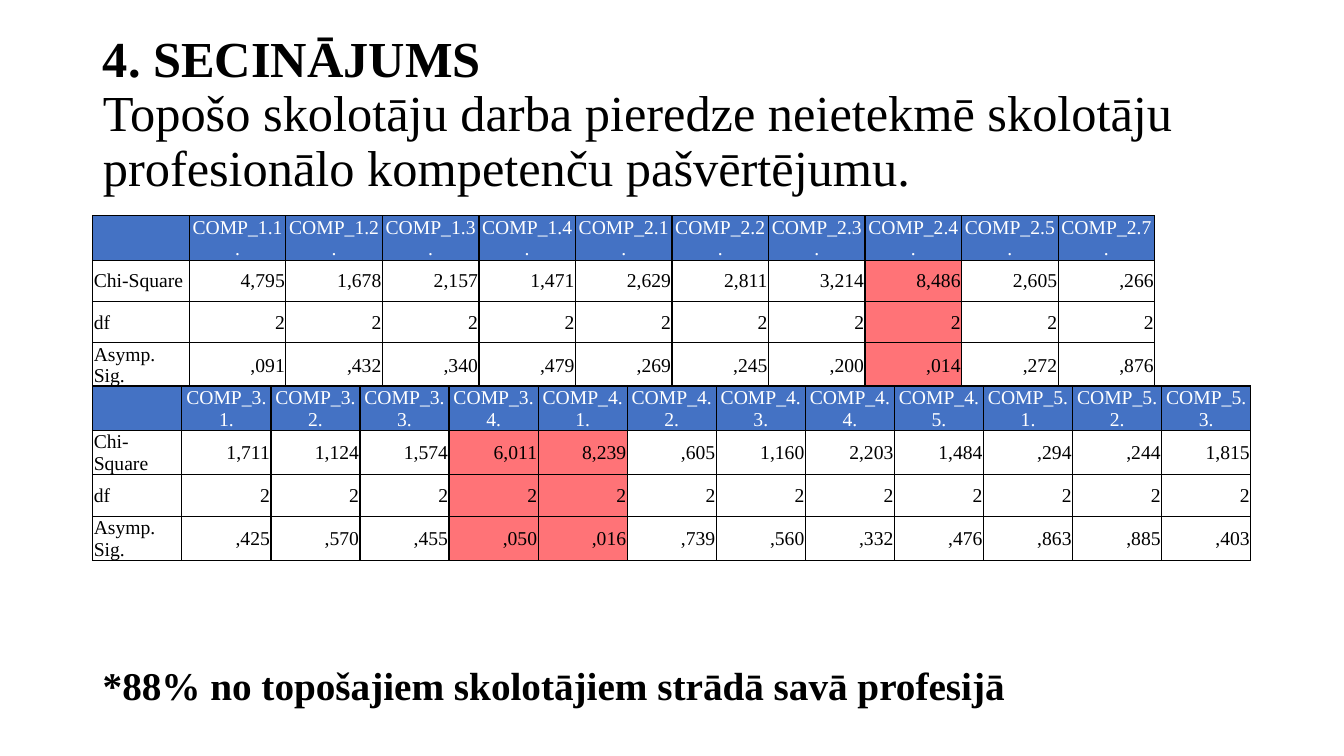
from lxml import etree
from pptx import Presentation
from pptx.dml.color import RGBColor
from pptx.enum.text import MSO_ANCHOR, MSO_AUTO_SIZE, PP_ALIGN
from pptx.oxml.ns import qn
from pptx.util import Inches, Pt

LEFT, CENTER, RIGHT = PP_ALIGN.LEFT, PP_ALIGN.CENTER, PP_ALIGN.RIGHT
MIDDLE = MSO_ANCHOR.MIDDLE
NO_FIT, GROW = MSO_AUTO_SIZE.NONE, MSO_AUTO_SIZE.SHAPE_TO_FIT_TEXT

WIDTH, HEIGHT = 13.33, 7.5
MARGIN = 0.92
CONTENT = WIDTH - 2 * MARGIN
ROW = 0.41
FONT = "Times New Roman"
BLACK, WHITE, BLUE, RED = "000000", "FFFFFF", "4472C4", "FF7377"
CELL_FORMAT = {
    "margin_left": Inches(0.01),
    "margin_right": Inches(0.01),
    "margin_top": Inches(0.01),
    "margin_bottom": 0,
    "vertical_anchor": MIDDLE,
}

FIRST_COMPETENCES = [
    ["", "COMP_1.1.", "COMP_1.2.", "COMP_1.3.", "COMP_1.4.", "COMP_2.1.",
     "COMP_2.2.", "COMP_2.3.", "COMP_2.4.", "COMP_2.5.", "COMP_2.7."],
    ["Chi-Square", "4,795", "1,678", "2,157", "1,471", "2,629",
     "2,811", "3,214", "8,486", "2,605", ",266"],
    ["df"] + ["2"] * 10,
    ["Asymp. Sig.", ",091", ",432", ",340", ",479", ",269",
     ",245", ",200", ",014", ",272", ",876"],
]
LAST_COMPETENCES = [
    ["", "COMP_3.1.", "COMP_3.2.", "COMP_3.3.", "COMP_3.4.", "COMP_4.1.", "COMP_4.2.",
     "COMP_4.3.", "COMP_4.4.", "COMP_4.5.", "COMP_5.1.", "COMP_5.2.", "COMP_5.3."],
    ["Chi-Square", "1,711", "1,124", "1,574", "6,011", "8,239", ",605",
     "1,160", "2,203", "1,484", ",294", ",244", "1,815"],
    ["df"] + ["2"] * 12,
    ["Asymp. Sig.", ",425", ",570", ",455", ",050", ",016", ",739",
     ",560", ",332", ",476", ",863", ",885", ",403"],
]


def color(value):
    """Turn a hex string into a colour."""
    return RGBColor.from_string(value)


def set_values(target, values):
    """Set every attribute of a dict on the target."""
    for name, value in values.items():
        setattr(target, name, value)


def add_text(paragraph, text, size, bold=False, ink=BLACK):
    """Add a formatted run to a paragraph."""
    run = paragraph.add_run()
    run.text = text
    set_values(run.font, {"name": FONT, "size": Pt(size), "bold": bold})
    run.font.color.rgb = color(ink)


def add_borders(cell):
    """Draw a thin black line on all four sides of a cell."""
    properties = cell._tc.get_or_add_tcPr()
    for side in ("a:lnL", "a:lnR", "a:lnT", "a:lnB"):
        line = etree.SubElement(properties, qn(side), w=str(Pt(1)))
        solid = etree.SubElement(line, qn("a:solidFill"))
        etree.SubElement(solid, qn("a:srgbClr"), val=BLACK)


def format_cell(cell, text, fill, align, ink):
    """Write one table cell with its borders, fill and text."""
    set_values(cell, CELL_FORMAT)
    add_borders(cell)
    if fill:
        cell.fill.solid()
        cell.fill.fore_color.rgb = color(fill)
    else:
        cell.fill.background()
    paragraph = cell.text_frame.paragraphs[0]
    paragraph.alignment = align
    if text:
        add_text(paragraph, text, 14, ink=ink)


def add_statistics(slide, top, column_width, rows, significant):
    """Add a test table whose significant columns are highlighted."""
    columns = len(rows[0])
    table = slide.shapes.add_table(
        len(rows), columns, Inches(MARGIN), Inches(top),
        Inches(columns * column_width), Inches(len(rows) * ROW)).table
    set_values(table, {"first_row": False, "horz_banding": False})
    for row_index, row in enumerate(rows):
        for column_index, text in enumerate(row):
            cell = table.cell(row_index, column_index)
            if row_index == 0:
                format_cell(cell, text, BLUE, CENTER, WHITE)
            else:
                fill = RED if column_index in significant else None
                align = RIGHT if column_index else LEFT
                format_cell(cell, text, fill, align, BLACK)


def add_conclusion(slide):
    """Fill the title with the heading and the conclusion."""
    title = slide.shapes.title
    set_values(title, {"left": Inches(MARGIN), "top": Inches(0.42),
                       "width": Inches(CONTENT), "height": Inches(1.45)})
    set_values(title.text_frame, {"word_wrap": True, "auto_size": NO_FIT,
                                  "vertical_anchor": MIDDLE})
    paragraph = title.text_frame.paragraphs[0]
    set_values(paragraph, {"alignment": LEFT, "line_spacing": 0.9})
    paragraph.font.size = Pt(36)
    add_text(paragraph, "4. SECINĀJUMS", 36, bold=True)
    paragraph.add_line_break()
    add_text(paragraph, "Topošo skolotāju darba pieredze neietekmē skolotāju "
             "profesionālo kompetenču pašvērtējumu.", 36)


def add_footnote(slide, text):
    """Add the bold remark at the bottom of the slide."""
    footnote = slide.shapes.add_textbox(
        Inches(MARGIN), Inches(6.51), Inches(9.79), Inches(0.57)).text_frame
    set_values(footnote, {"word_wrap": True, "auto_size": GROW})
    add_text(footnote.paragraphs[0], text, 28, bold=True)


def main():
    """Build and save the slide."""
    deck = Presentation()
    set_values(deck, {"slide_width": Inches(WIDTH), "slide_height": Inches(HEIGHT)})
    slide = deck.slides.add_slide(deck.slide_layouts[5])
    add_conclusion(slide)
    add_statistics(slide, 2.14, CONTENT / 12, FIRST_COMPETENCES, {8})
    add_statistics(slide, 3.83, CONTENT / 13, LAST_COMPETENCES, {4, 5})
    add_footnote(slide, "*88% no topošajiem skolotājiem strādā savā profesijā")
    deck.save("out.pptx")


if __name__ == "__main__":
    main()
